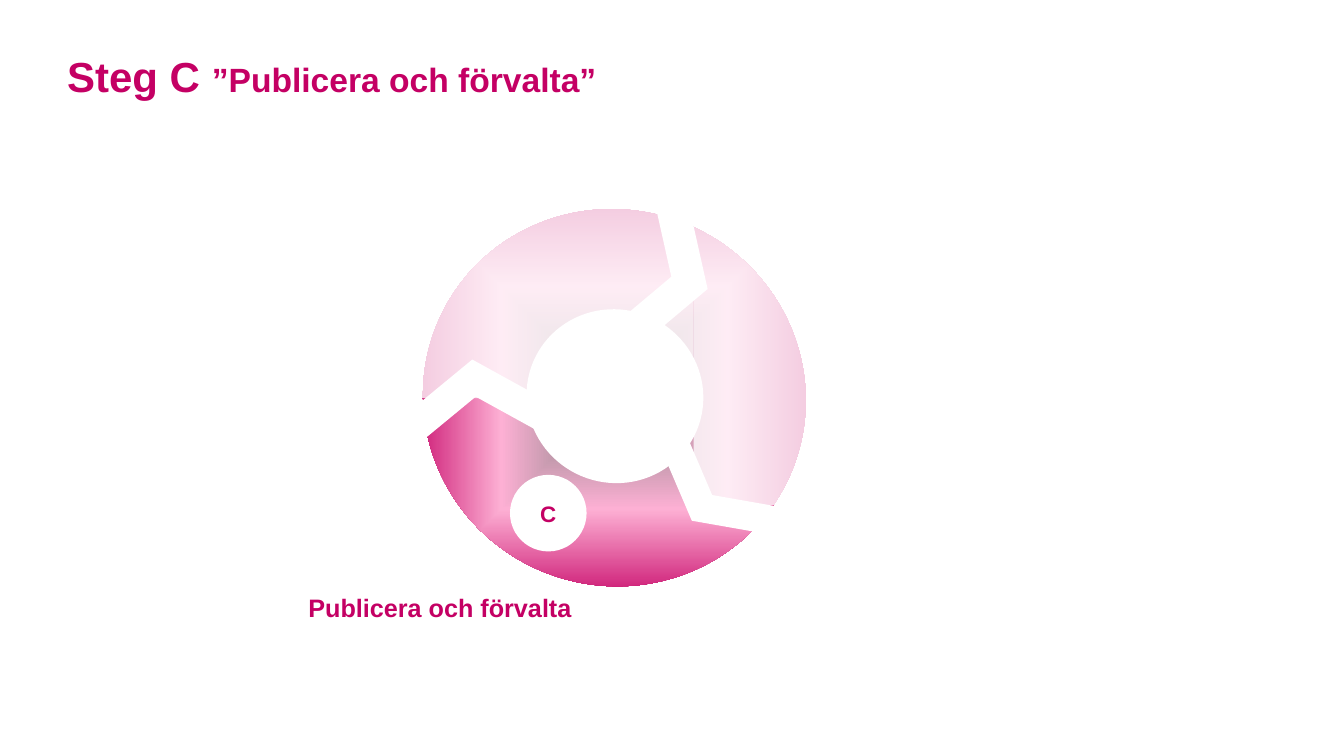
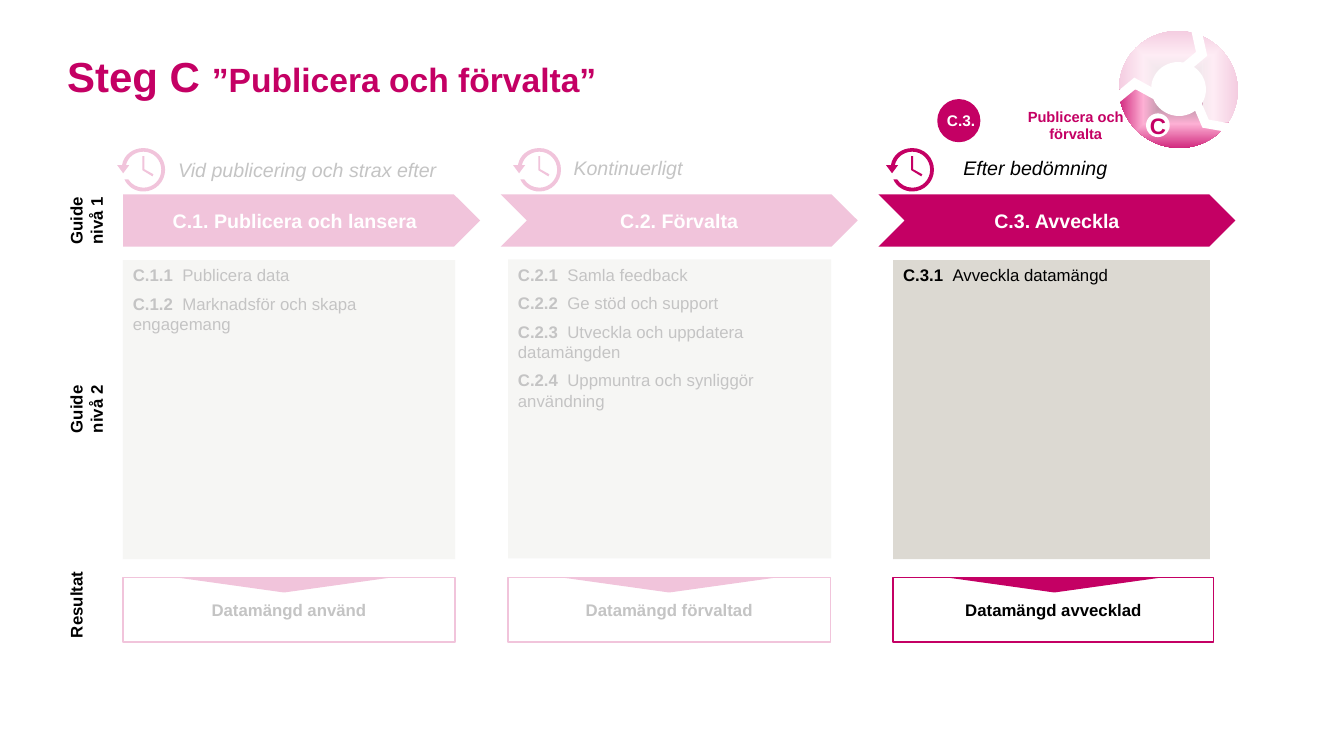
"""Build two slides on step C, publishing and maintaining data."""
from lxml.etree import SubElement
from pptx import Presentation
from pptx.dml.color import RGBColor
from pptx.enum.shapes import MSO_SHAPE
from pptx.enum.text import MSO_ANCHOR, MSO_AUTO_SIZE, PP_ALIGN
from pptx.oxml import parse_xml
from pptx.oxml.ns import qn
from pptx.util import Pt

CERISE = RGBColor(0xC4, 0x00, 0x64)
SAND = RGBColor(0xDC, 0xD9, 0xD2)
WHITE = RGBColor(0xFF, 0xFF, 0xFF)
BLACK = RGBColor(0x00, 0x00, 0x00)
FONT = "Arial"
VEIL_OPACITY = 77
WHEEL_GRADIENT = """
<a:gradFill rotWithShape="0" xmlns:a="http://schemas.openxmlformats.org/drawingml/2006/main">
  <a:gsLst>
    <a:gs pos="1000"><a:srgbClr val="808080"/></a:gs>
    <a:gs pos="45000"><a:srgbClr val="FDB0D4"/></a:gs>
    <a:gs pos="85000"><a:srgbClr val="C50366"/></a:gs>
  </a:gsLst>
  <a:path path="shape"><a:fillToRect l="50000" t="50000" r="50000" b="50000"/></a:path>
</a:gradFill>"""


def add_box(slide, kind, at, fill=None, line=None, line_width=1, rotation=0, opacity=100,
            text="", size=12, color=BLACK, bold=True, italic=False,
            align=PP_ALIGN.CENTER, anchor=MSO_ANCHOR.MIDDLE, inset=True):
    """Add a preset shape, or a text box when kind is None, at a place in points."""
    place = [Pt(length) for length in at]
    if kind is None:
        box = slide.shapes.add_textbox(*place)
    else:
        box = slide.shapes.add_shape(kind, *place)
        box.shadow.inherit = False
        if fill is None:
            box.fill.background()
        else:
            box.fill.solid()
            box.fill.fore_color.rgb = fill
        if line is None:
            box.line.fill.background()
        else:
            box.line.color.rgb = line
            box.line.width = Pt(line_width)
    box.rotation = rotation
    if opacity < 100:
        tint = box.element.spPr.find(qn("a:solidFill"))[0]
        SubElement(tint, qn("a:alpha")).set("val", str(opacity * 1000))
    if text:
        frame = box.text_frame
        frame.word_wrap = True
        frame.vertical_anchor = anchor
        if not inset:
            frame.margin_left = frame.margin_right = 0
            frame.margin_top = frame.margin_bottom = 0
        frame.text = text
        for para in frame.paragraphs:
            para.alignment = align
            for span in para.runs:
                span.font.name = FONT
                span.font.size = Pt(size)
                span.font.color.rgb = color
                span.font.bold = bold
                span.font.italic = italic
    return box


def add_wheel(slide, left, top, scale):
    """Add the three-part wheel with step C in focus and the other steps veiled."""
    parts = [
        (MSO_SHAPE.OVAL, (0, 0, 274.3, 268.6), 22.7, {}),
        (MSO_SHAPE.OVAL, (74.2, 71.3, 126.7, 123.8), 22.7, {}),
        (MSO_SHAPE.CHEVRON, (11.5, 94.3, 53.3, 78.5), 264.7, {}),
        (MSO_SHAPE.CHEVRON, (150.5, 2.9, 54.7, 90), 18.7, {}),
        (MSO_SHAPE.CHEVRON, (183.6, 160.6, 46.8, 86.4), 128.4, {}),
        (MSO_SHAPE.OVAL, (62.6, 189.4, 54.7, 54.7), 0,
         {"text": "C", "size": 16, "color": CERISE, "inset": False}),
        (MSO_SHAPE.RECTANGLE, (193.7, -17.3, 238.3, 228.2), 0, {"opacity": VEIL_OPACITY}),
        (MSO_SHAPE.RECTANGLE, (-22.3, -81.4, 162.7, 269.3), 90, {"opacity": VEIL_OPACITY}),
    ]
    for index, (kind, (x, y, width, height), rotation, extras) in enumerate(parts):
        at = (left + x * scale, top + y * scale, width * scale, height * scale)
        part = add_box(slide, kind, at, WHITE, rotation=rotation, **extras)
        if index == 0:
            solid = part.element.spPr.find(qn("a:solidFill"))
            part.element.spPr.replace(solid, parse_xml(WHEEL_GRADIENT))


deck = Presentation()
deck.slide_width = Pt(960)
deck.slide_height = Pt(540)

pages = []
for title_width in (864, 750):
    page = deck.slides.add_slide(deck.slide_layouts[5])
    title = page.shapes.title
    title.left, title.top, title.width, title.height = Pt(48), Pt(36), Pt(title_width), Pt(65.5)
    frame = title.text_frame
    frame.auto_size = MSO_AUTO_SIZE.NONE
    frame.word_wrap = True
    frame.vertical_anchor = MSO_ANCHOR.TOP
    frame.margin_left = frame.margin_right = 0
    frame.margin_top = frame.margin_bottom = 0
    para = frame.paragraphs[0]
    para.alignment = PP_ALIGN.LEFT
    for words, size in (("Steg C ", 30), ("”Publicera och förvalta”", 24)):
        span = para.add_run()
        span.text = words
        span.font.name = FONT
        span.font.size = Pt(size)
        span.font.bold = True
        span.font.color.rgb = CERISE
    pages.append(page)
overview, detail = pages

add_wheel(overview, 301.7, 149.8, 1)
add_box(overview, None, (189.4, 378, 249.8, 111.6),
        text="Publicera och förvalta", size=18, color=CERISE)

ring = [
    [(7.9, 22.3)],
    [(5.2, 22.3)],
    [(7.4, 27.5), (12.7, 31), (18.8, 31)],
    [(27.4, 31), (34.2, 24), (34.2, 15.5)],
    [(34.2, 6.9), (27.4, 0), (18.8, 0)],
    [(11, 0), (4.6, 5), (3.5, 12.2)],
    [(0, 12.2)],
    [(4.3, 18)],
    [(8.6, 12.2)],
    [(6.3, 12.2)],
    [(7.4, 6.7), (12.6, 2.6), (18.8, 2.6)],
    [(25.9, 2.6), (31.5, 8.4), (31.5, 15.5)],
    [(31.5, 22.6), (25.9, 28.3), (18.8, 28.3)],
    [(14.2, 28.3), (10.2, 26), (7.9, 22.3)],
]
hands = [[point] for point in ((18, 5.8), (18, 15.8), (25.2, 20.2), (25.9, 18.7),
                               (19.4, 15.1), (19.4, 5.8))]

columns = [
    {"arrow": MSO_SHAPE.PENTAGON, "heading": "C.1. Publicera och lansera",
     "when": "Vid publicering och strax efter", "when_at": (120.2, 109), "clock": 83.7,
     "widths": (237.3, 237.3), "top": 185.8, "result": "Datamängd använd",
     "steps": [("C.1.1  ", "Publicera data"),
               ("C.1.2  ", "Marknadsför och skapa engagemang")]},
    {"arrow": MSO_SHAPE.CHEVRON, "heading": "C.2. Förvalta",
     "when": "Kontinuerligt", "when_at": (402.6, 108), "clock": 366.5,
     "widths": (230.8, 230.4), "top": 185.2, "result": "Datamängd förvaltad",
     "steps": [("C.2.1  ", "Samla feedback"),
               ("C.2.2  ", "Ge stöd och support"),
               ("C.2.3  ", "Utveckla och uppdatera datamängden"),
               ("C.2.4  ", "Uppmuntra och synliggör användning")]},
    {"arrow": MSO_SHAPE.CHEVRON, "heading": "C.3. Avveckla",
     "when": "Efter bedömning", "when_at": (681, 108), "clock": 632.9,
     "widths": (226.3, 229), "top": 185.8, "result": "Datamängd avvecklad",
     "steps": [("C.3.1  ", "Avveckla datamängd")]},
]

for index, column in enumerate(columns):
    left = 87.8 + 275.1 * index
    steps_width, result_width = column["widths"]

    steps = add_box(detail, MSO_SHAPE.RECTANGLE, (left, column["top"], steps_width, 213.6), SAND)
    frame = steps.text_frame
    frame.word_wrap = True
    frame.vertical_anchor = MSO_ANCHOR.TOP
    for number, step in enumerate(column["steps"]):
        para = frame.add_paragraph() if number else frame.paragraphs[0]
        para.alignment = PP_ALIGN.LEFT
        if number:
            para.space_before = Pt(6)
        for words, bold in zip(step, (True, False)):
            span = para.add_run()
            span.text = words
            span.font.name = FONT
            span.font.size = Pt(12)
            span.font.bold = bold
            span.font.color.rgb = BLACK

    add_box(detail, column["arrow"], (87.9 + 269.8 * index, 138.8, 255, 37.4), CERISE,
            text=column["heading"], size=14, color=WHITE)
    add_box(detail, MSO_SHAPE.RECTANGLE, (left, 412.6, result_width, 46.1), line=CERISE,
            text=column["result"])
    add_box(detail, MSO_SHAPE.ISOSCELES_TRIANGLE, (left + 37.8, 412.4, 154.6, 10.8), CERISE,
            rotation=180)
    add_box(detail, None, (*column["when_at"], 210, 24.5), text=column["when"], size=14,
            bold=False, italic=True, align=PP_ALIGN.LEFT, anchor=MSO_ANCHOR.TOP)

    for outline in (ring, hands):
        ends = [(Pt(segment[-1][0]), Pt(segment[-1][1])) for segment in outline]
        builder = detail.shapes.build_freeform(*ends[0])
        builder.add_line_segments(ends[1:])
        clock_part = builder.convert_to_shape(Pt(column["clock"]), Pt(105.8))
        clock_part.shadow.inherit = False
        clock_part.fill.solid()
        clock_part.fill.fore_color.rgb = CERISE
        clock_part.line.fill.background()
        edges = list(clock_part.element.iter(qn("a:lnTo")))
        for edge, segment in zip(edges, outline[1:]):
            if len(segment) == 3:
                edge.tag = qn("a:cubicBezTo")
                for place, (x, y) in enumerate(segment[:2]):
                    control = edge.makeelement(qn("a:pt"), {"x": str(Pt(x)), "y": str(Pt(y))})
                    edge.insert(place, control)

add_wheel(detail, 799.2, 22.3, 0.31)
add_box(detail, None, (723.8, 69.3, 89.3, 40.3),
        text="Publicera och förvalta", size=10.5, color=CERISE)
add_box(detail, MSO_SHAPE.RECTANGLE, (82.8, 87.1, 538.6, 383.8), WHITE, opacity=VEIL_OPACITY)
add_box(detail, MSO_SHAPE.OVAL, (670.5, 71.8, 28.8, 28.8), CERISE, CERISE, 2)
add_box(detail, None, (669.3, 75.6, 43.2, 20.9), text="C.3.", size=11, color=WHITE,
        align=PP_ALIGN.LEFT, anchor=MSO_ANCHOR.TOP)

for words, at in (("Guide nivå 1", (33.8, 141.8, 58.3, 31.7)),
                  ("Guide\nnivå 2", (-43.9, 276.5, 213.8, 31.7)),
                  ("Resultat", (26.6, 416.2, 72.7, 31.7))):
    add_box(detail, None, at, rotation=270, text=words, anchor=MSO_ANCHOR.TOP, inset=False)

deck.save("out.pptx")
